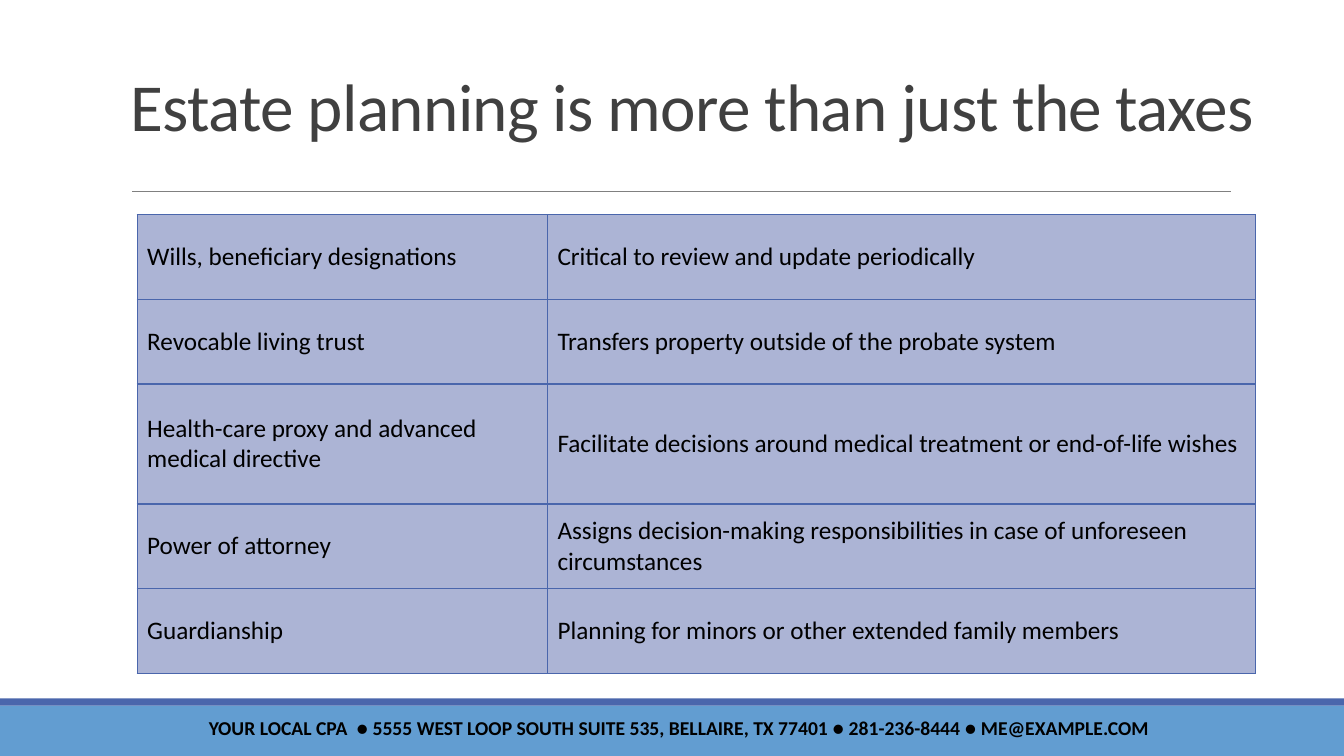
from lxml.etree import SubElement
from pptx import Presentation
from pptx.dml.color import RGBColor
from pptx.enum.shapes import MSO_CONNECTOR as Connector, MSO_SHAPE as Shape
from pptx.enum.text import MSO_ANCHOR as Anchor, PP_ALIGN as Align
from pptx.oxml import parse_xml
from pptx.oxml.ns import nsdecls, qn
from pptx.util import Inches, Pt

FONT = "Calibri"
NAVY = "4A66AC"
BLUE = "629DD1"
PALE_BLUE = "ACB4D5"
GRAY = "808080"
DARK_GRAY = "404040"
BLACK = "000000"

COLUMN_WIDTHS = [4.07, 7.02]
ROW_HEIGHTS = [0.84, 0.84, 1.19, 0.84, 0.84]
TOPICS = [
    ("Wills, beneficiary designations", "Critical to review and update periodically"),
    ("Revocable living trust", "Transfers property outside of the probate system"),
    ("Health-care proxy and advanced medical directive",
     "Facilitate decisions around medical treatment or end-of-life wishes"),
    ("Power of attorney",
     "Assigns decision-making responsibilities in case of unforeseen circumstances"),
    ("Guardianship", "Planning for minors or other extended family members"),
]
FOOTER = ("YOUR LOCAL CPA  ● 5555 WEST LOOP SOUTH SUITE 535, BELLAIRE, TX 77401"
          " ● 281-236-8444 ● ME@EXAMPLE.COM")


def paint(color_format, color):
    color_format.rgb = RGBColor.from_string(color)


def fill_with(item, color):
    item.fill.solid()
    paint(item.fill.fore_color, color)


def set_font(para, size, color, bold=False):
    para.font.name = FONT
    para.font.size = Pt(size)
    para.font.bold = bold
    paint(para.font.color, color)


def add_band(page, top, height, color):
    band = page.shapes.add_shape(Shape.RECTANGLE, 0, Inches(top), Inches(13.33), Inches(height))
    band.shadow.inherit = False
    fill_with(band, color)
    band.line.fill.background()


def add_rule(page, left, right, top):
    rule = page.shapes.add_connector(
        Connector.STRAIGHT, Inches(left), Inches(top), Inches(right), Inches(top))
    paint(rule.line.color, GRAY)
    rule.line.width = Pt(0.5)
    SubElement(rule._element.spPr, qn("a:effectLst"))


def add_text(page, left, top, width, height, text, size, color, bold=False, align=Align.LEFT):
    box = page.shapes.add_textbox(Inches(left), Inches(top), Inches(width), Inches(height))
    frame = box.text_frame
    frame.word_wrap = True
    frame.vertical_anchor = Anchor.MIDDLE
    para = frame.paragraphs[0]
    para.text = text
    para.alignment = align
    set_font(para, size, color, bold)
    return para


def add_title(page, text):
    para = add_text(page, 1.2, 0.31, 11.35, 1.59, text, 48, DARK_GRAY)
    para.line_spacing = 0.85
    para.runs[0].font._element.set("spc", "-50")


def add_borders(cell, color):
    properties = cell._tc.get_or_add_tcPr()
    for position, side in enumerate(("lnL", "lnR", "lnT", "lnB")):
        border = parse_xml(
            f'<a:{side} {nsdecls("a")} w="{Pt(1)}"><a:solidFill>'
            f'<a:srgbClr val="{color}"/></a:solidFill></a:{side}>')
        properties.insert(position, border)


def add_topic_table(page, left, top):
    frame = page.shapes.add_table(
        len(TOPICS), len(COLUMN_WIDTHS), Inches(left), Inches(top),
        Inches(sum(COLUMN_WIDTHS)), Inches(sum(ROW_HEIGHTS)))
    table = frame.table
    table.first_row = False
    table.horz_banding = False
    for column, width in zip(table.columns, COLUMN_WIDTHS):
        column.width = Inches(width)
    for row, height, texts in zip(table.rows, ROW_HEIGHTS, TOPICS):
        row.height = Inches(height)
        for cell, text in zip(row.cells, texts):
            cell.text = text
            cell.vertical_anchor = Anchor.MIDDLE
            set_font(cell.text_frame.paragraphs[0], 18, BLACK)
            fill_with(cell, PALE_BLUE)
            add_borders(cell, NAVY)


def main():
    deck = Presentation()
    deck.slide_width = Inches(13.33)
    deck.slide_height = Inches(7.5)
    page = deck.slides.add_slide(deck.slide_layouts[6])
    add_band(page, 7, 0.5, BLUE)
    add_band(page, 6.93, 0.07, NAVY)
    add_rule(page, 1.31, 12.21, 1.9)
    add_title(page, "Estate planning is more than just the taxes")
    add_topic_table(page, 1.36, 2.13)
    add_text(page, 0.92, 6.98, 11.64, 0.47, FOOTER, 14, BLACK, bold=True, align=Align.CENTER)
    deck.save("out.pptx")


if __name__ == "__main__":
    main()
